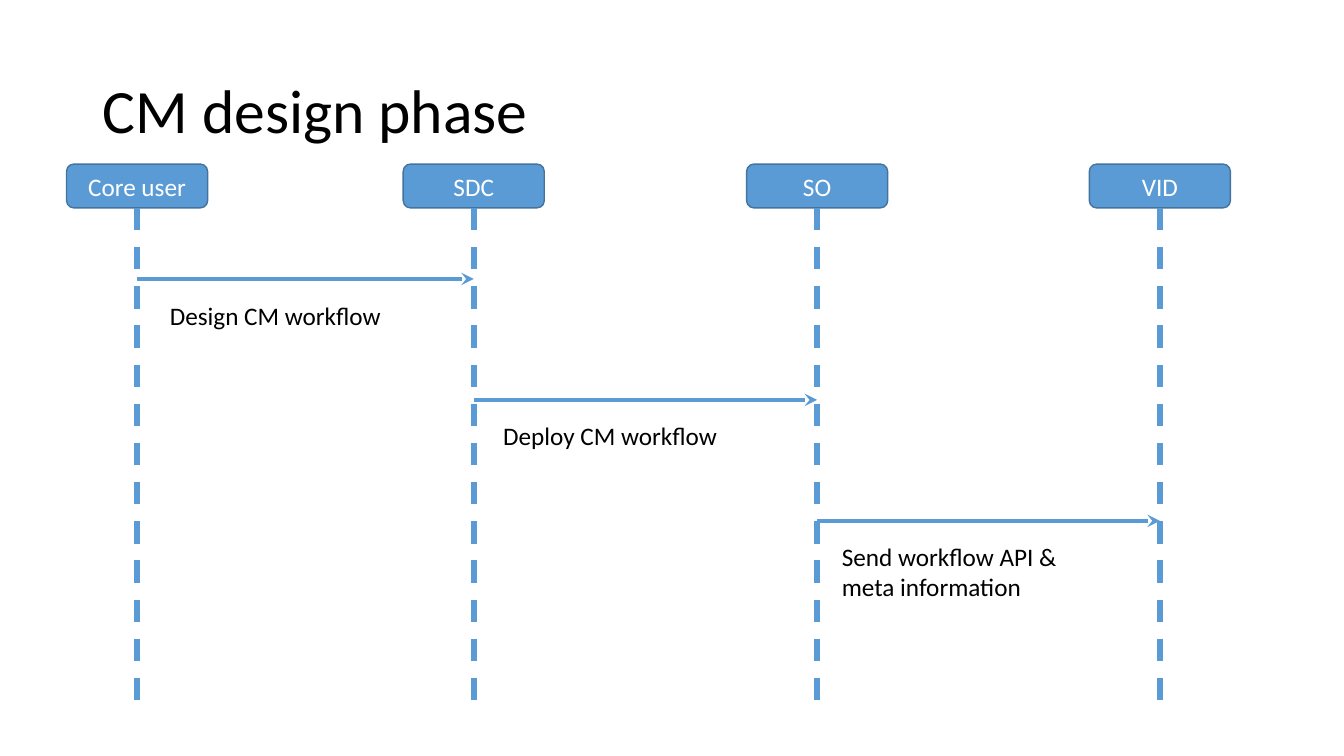
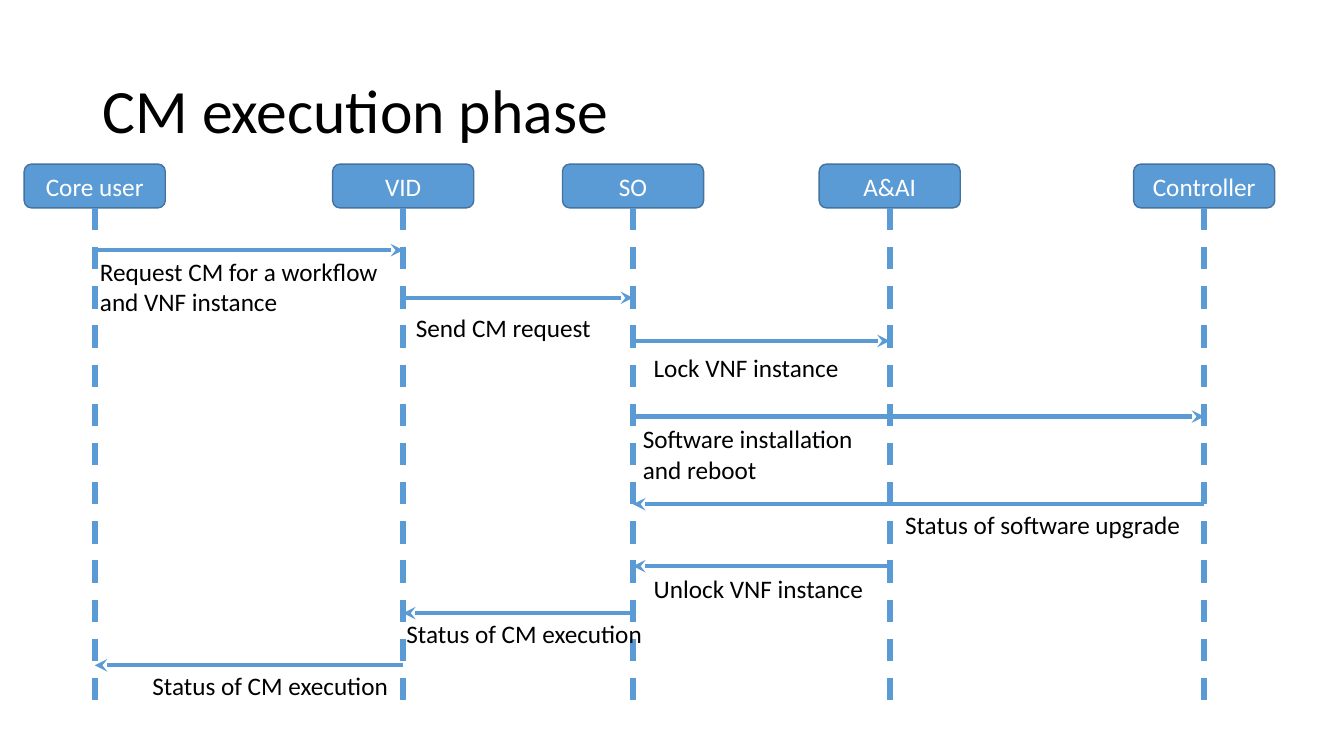
"""Build two sequence diagrams: the CM design phase and the CM execution phase."""
from dataclasses import dataclass

from lxml import etree
from pptx import Presentation
from pptx import util as u
from pptx.dml.color import RGBColor
from pptx.enum import dml, shapes, text
from pptx.oxml.ns import qn


@dataclass(frozen=True)
class Theme:
    font: str = "Calibri"
    blue: RGBColor = RGBColor(0x5B, 0x9B, 0xD5)
    edge: RGBColor = RGBColor(0x43, 0x73, 0x9E)
    black: RGBColor = RGBColor(0, 0, 0)
    white: RGBColor = RGBColor(255, 255, 255)
    title_size: u.Pt = u.Pt(44)
    body_size: u.Pt = u.Pt(18)
    edge_width: u.Pt = u.Pt(1)
    arrow_width: u.Pt = u.Pt(3)
    lifeline_width: u.Pt = u.Pt(4)


theme = Theme()
deck = Presentation()
deck.slide_width, deck.slide_height = u.Inches(13.33), u.Inches(7.5)
col, row = deck.slide_width / 100, deck.slide_height / 100

BOX_TOP, BOX_WIDTH, BOX_HEIGHT = 21.7, 10.5, 5.8
LIFELINE_END = 93

diagrams = [
    {
        "title": "CM design phase",
        "actors": [("Core user", 10.2), ("SDC", 35.25), ("SO", 60.8), ("VID", 86.3)],
        "messages": [
            (0, 1, 36.9, "Design CM workflow", 11.9, 2.2, 18.5),
            (1, 2, 52.9, "Deploy CM workflow", 36.7, 2, 18.5),
            (2, 3, 68.9, "Send workflow API & meta information", 61.9, 2, 19.9),
        ],
    },
    {
        "title": "CM execution phase",
        "actors": [("Core user", 7.05), ("VID", 30), ("SO", 47.1), ("A&AI", 66.2), ("Controller", 89.6)],
        "messages": [
            (0, 1, 33.1, "Request CM for a workflow and VNF instance", 6.7, 0.1, 22.8),
            (1, 2, 39.4, "Send CM request", 30.2, 1.2, 15),
            (2, 3, 45.1, "Lock VNF instance", 47.9, 0.8, 16.6),
            (2, 4, 55.1, "Software installation and reboot", 47.1, 0.3, 18.3),
            (4, 2, 66.7, "Status of software upgrade", 66.6, 0, 22.7),
            (3, 2, 74.9, "Unlock VNF instance", 47.9, 0.3, 17.6),
            (2, 1, 81.1, "Status of CM execution", 29.5, 0, 19.4),
            (1, 0, 88, "Status of CM execution", 10.6, 0, 19.3),
        ],
    },
]


def write(shape, words, size, color, anchor=text.MSO_ANCHOR.TOP, align=text.PP_ALIGN.LEFT):
    """Put one styled paragraph in a shape."""
    frame = shape.text_frame
    frame.word_wrap = True
    frame.vertical_anchor = anchor
    para = frame.paragraphs[0]
    para.text, para.alignment = words, align
    para.font.name, para.font.size = theme.font, size
    para.font.color.rgb = color
    return para


def draw_line(page, start_x, start_y, end_x, end_y, width):
    """Draw a plain blue straight connector."""
    line = page.shapes.add_connector(
        shapes.MSO_CONNECTOR.STRAIGHT, round(start_x), round(start_y), round(end_x), round(end_y))
    line.line.color.rgb, line.line.width = theme.blue, width
    etree.SubElement(line._element.spPr, qn("a:effectLst"))
    return line


for diagram in diagrams:
    page = deck.slides.add_slide(deck.slide_layouts[6])
    title = page.shapes.add_textbox(
        round(6.9 * col), round(5.3 * row), round(86.3 * col), round(19.3 * row))
    para = write(title, diagram["title"], theme.title_size, theme.black, text.MSO_ANCHOR.MIDDLE)
    para.line_spacing = 0.9

    centers = []
    for name, center in diagram["actors"]:
        box = page.shapes.add_shape(
            shapes.MSO_SHAPE.ROUNDED_RECTANGLE, round((center - BOX_WIDTH / 2) * col),
            round(BOX_TOP * row), round(BOX_WIDTH * col), round(BOX_HEIGHT * row))
        box.shadow.inherit = False
        box.fill.solid()
        box.fill.fore_color.rgb = theme.blue
        box.line.color.rgb, box.line.width = theme.edge, theme.edge_width
        write(box, name, theme.body_size, theme.white, text.MSO_ANCHOR.MIDDLE, text.PP_ALIGN.CENTER)
        middle = box.left + box.width // 2
        lifeline = draw_line(
            page, middle, box.top + box.height, middle, LIFELINE_END * row, theme.lifeline_width)
        lifeline.line.dash_style = dml.MSO_LINE.DASH
        lifeline.begin_connect(box, 2)
        centers.append(middle)

    for sender, receiver, level, words, left, drop, width in diagram["messages"]:
        arrow = draw_line(
            page, centers[sender], level * row, centers[receiver], level * row, theme.arrow_width)
        etree.SubElement(arrow.line._get_or_add_ln(), qn("a:tailEnd"), type="stealth")
        lines = 2 if len(words) > 30 else 1
        label = page.shapes.add_textbox(
            round(left * col), round((level + drop) * row), round(width * col),
            round((1.3 + 4.05 * lines) * row))
        write(label, words, theme.body_size, theme.black)

deck.save("out.pptx")
